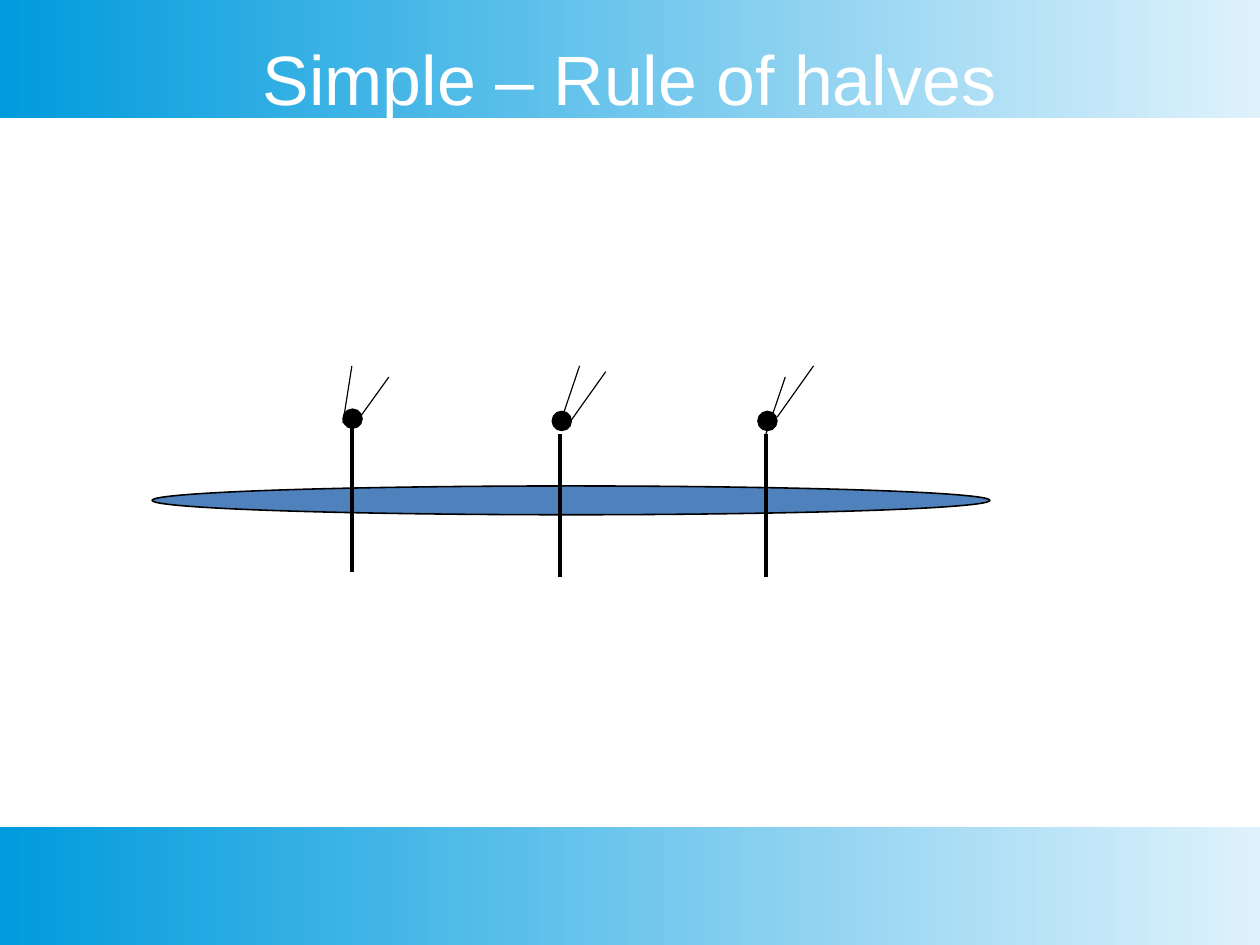
"""Build the slide "Simple – Rule of halves"."""
from pptx import Presentation
from pptx.dml.color import RGBColor
from pptx.enum.shapes import MSO_CONNECTOR as Link, MSO_SHAPE as Preset
from pptx.enum.text import MSO_ANCHOR as Anchor, MSO_AUTO_SIZE as Fit, PP_ALIGN as Align
from pptx.oxml.ns import qn
from pptx.util import Cm, Pt
from lxml.etree import SubElement

TITLE = "Simple – Rule of halves"
WIDTH, HEIGHT = 28, 21
BAND_HEIGHT = 2.62
BAND_COLORS = ("009BDD", "DFF2FC")
BLACK, WHITE, BLUE = "000000", "FFFFFF", "4F81BD"
BEAM = (3.38, 10.8, 18.62, 0.64)
POST_LENGTH = 3.18
HEAD_SIZE = 0.43
FIGURES = [
    {"post": (7.82, 9.52), "head": (7.62, 9.09),
     "rays": [(8.64, 8.38, 7.82, 9.52), (7.82, 8.13, 7.62, 9.4)]},
    {"post": (12.45, 9.65), "head": (12.27, 9.14),
     "rays": [(12.88, 8.13, 12.45, 9.4), (13.46, 8.26, 12.65, 9.4)]},
    {"post": (17.02, 9.65), "head": (16.84, 9.14),
     "rays": [(17.45, 8.38, 17.02, 9.65), (18.08, 8.13, 17.27, 9.27)]},
]


def color(value):
    return RGBColor.from_string(value)


def lengths(values):
    return [Cm(value) for value in values]


def add_band(page, top):
    band = page.shapes.add_shape(Preset.RECTANGLE, *lengths((0, top, WIDTH, BAND_HEIGHT)))
    band.shadow.inherit = False
    band.line.fill.background()
    band.fill.gradient()
    band.fill.gradient_angle = 0
    for stop, value in zip(band.fill.gradient_stops, BAND_COLORS):
        stop.color.rgb = color(value)


def add_ellipse(page, place, fill, weight):
    ellipse = page.shapes.add_shape(Preset.OVAL, *lengths(place))
    ellipse.shadow.inherit = False
    ellipse.fill.solid()
    ellipse.fill.fore_color.rgb = color(fill)
    ellipse.line.color.rgb = color(BLACK)
    ellipse.line.width = Pt(weight)


def add_line(page, ends, weight):
    line = page.shapes.add_connector(Link.STRAIGHT, *lengths(ends))
    line.line.color.rgb = color(BLACK)
    line.line.width = Pt(weight)
    SubElement(line._element.spPr, qn("a:effectLst"))


def format_title(page):
    title = page.shapes.title
    title.left, title.top, title.width, title.height = lengths((1.4, 0.84, 25.2, 1.78))
    frame = title.text_frame
    frame.text = TITLE
    frame.word_wrap = True
    frame.auto_size = Fit.NONE
    frame.vertical_anchor = Anchor.MIDDLE
    frame.margin_left = frame.margin_right = frame.margin_top = frame.margin_bottom = 0
    para = frame.paragraphs[0]
    para.alignment = Align.CENTER
    para.font.name = "Arial"
    para.font.size = Pt(44)
    para.font.color.rgb = color(WHITE)
    page.shapes._spTree.append(title._element)


def main():
    deck = Presentation()
    deck.slide_width, deck.slide_height = lengths((WIDTH, HEIGHT))
    page = deck.slides.add_slide(deck.slide_layouts[5])
    for top in (0, HEIGHT - BAND_HEIGHT):
        add_band(page, top)
    format_title(page)
    add_ellipse(page, BEAM, BLUE, 1)
    for figure in FIGURES:
        x, y = figure["post"]
        add_line(page, (x, y, x, y + POST_LENGTH), 2.25)
        add_ellipse(page, (*figure["head"], HEAD_SIZE, HEAD_SIZE), BLACK, 0.75)
        for ray in figure["rays"]:
            add_line(page, ray, 0.75)
    deck.save("out.pptx")


if __name__ == "__main__":
    main()
